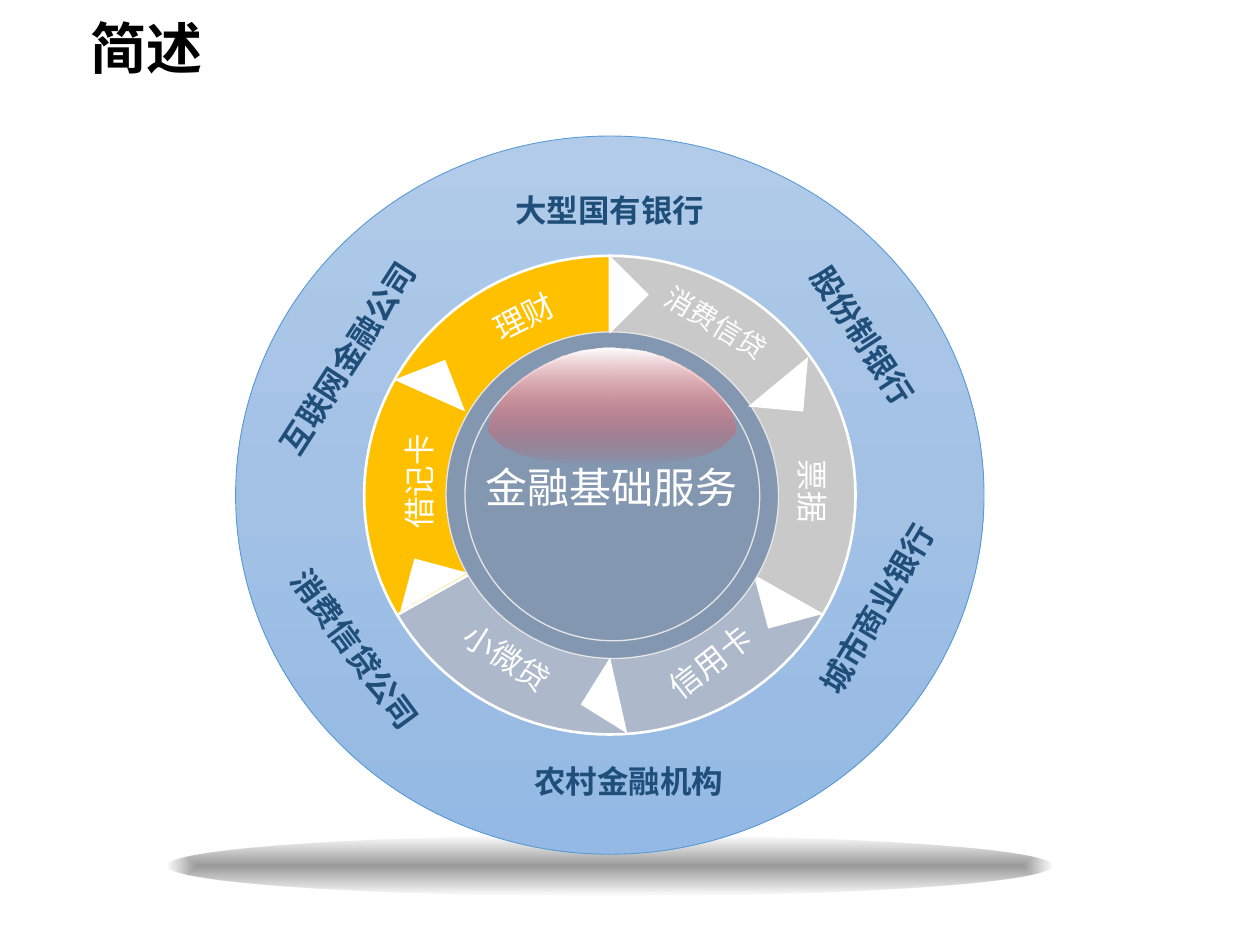
from math import cos, radians, sin

from lxml import etree
from pptx import Presentation
from pptx import util as u
from pptx.dml.color import RGBColor
from pptx.enum import shapes, text
from pptx.oxml import ns

WIDE, TALL = u.Inches(10), u.Inches(7.5)
COL, ROW = WIDE / 100, TALL / 75
WHITE = RGBColor(0xFF, 0xFF, 0xFF)
BLACK = RGBColor(0x00, 0x00, 0x00)
RED = RGBColor(0xFF, 0x00, 0x00)
NAVY = RGBColor(0x1F, 0x4E, 0x79)
SLATE = RGBColor(0x84, 0x97, 0xB0)
MIST = RGBColor(0xAD, 0xB9, 0xCA)
SILVER = RGBColor(0xC9, 0xC9, 0xC9)
GOLD = RGBColor(0xFF, 0xC0, 0x00)
PALE = RGBColor(0xE7, 0xE6, 0xE6)
EDGE = RGBColor(0x5B, 0x9B, 0xD5)
SKY = [RGBColor(0xB1, 0xCB, 0xE9), RGBColor(0xA3, 0xC1, 0xE5), RGBColor(0x93, 0xB9, 0xE4)]
NOTO, LATIN = "Noto Sans CJK SC", "Calibri"

TIPS = [(-13.95, 7.7, 105), (14.1, 7.9, 345), (0, -15.9, 225),
        (0.7, 15.9, 31.9), (-14.3, -7.9, 158.7), (13.35, -9, 275.1)]
GOODS = [("理财", -6.85, -14.2, 333.3, 18), ("票据", 16.15, -0.3, 90, 18),
         ("消费信贷", 8.35, -13.55, 31, 16), ("借记卡", -15.15, -1.1, 270, 18),
         ("小微贷", -8.15, 12.9, 32.5, 18), ("信用卡", 7.95, 13.2, 322, 18)]
BANKS = [("大型国有银行", 0, -22.6, 0, 18.6), ("股份制银行", 20.1, -12.7, 56.8, 18.6),
         ("城市商业银行", 21.2, 9, 300.9, 18.6), ("农村金融机构", 1.5, 22.7, 0, 18.6),
         ("互联网金融公司", -20.8, -10.9, 302.8, 20.8), ("消费信贷公司", -20.2, 12.2, 53.6, 18.6)]
GLOSS = [(0, -11.7), (1.4, -11.6), (2.7, -11.4), (4, -11), (5.1, -10.5), (6.2, -9.9),
         (7.2, -9.2), (8.1, -8.4), (8.8, -7.5), (9.5, -6.5), (9.8, -5.5), (9.8, -5),
         (9.4, -4.5), (8.6, -3.8), (7.3, -3.2), (5.6, -2.8), (3.5, -2.5), (2, -2.4)]


def area(hub, x, y, w, h):
    left, top = hub[0] + x - w / 2, hub[1] + y - h / 2
    return [u.Emu(round(n)) for n in (left * COL, top * ROW, w * COL, h * ROW)]


def paint(shape, fill=None, line=None, size=0.75):
    shape.shadow.inherit = False
    if fill is not None:
        shape.fill.solid()
        shape.fill.fore_color.rgb = fill
    if line is None:
        shape.line.fill.background()
    else:
        shape.line.color.rgb = line
        shape.line.width = u.Pt(size)


def blend(shape, stops, round_off=False):
    shape.fill.gradient()
    grad = shape.fill._xPr.find(ns.qn("a:gradFill"))
    for node in list(grad):
        grad.remove(node)
    row = etree.SubElement(grad, ns.qn("a:gsLst"))
    for pos, color, alpha in stops:
        stop = etree.SubElement(row, ns.qn("a:gs"), pos=str(pos * 1000))
        tint = etree.SubElement(stop, ns.qn("a:srgbClr"), val=str(color))
        if alpha < 100:
            etree.SubElement(tint, ns.qn("a:alpha"), val=str(alpha * 1000))
    if round_off:
        way = etree.SubElement(grad, ns.qn("a:path"), {"path": "shape"})
        etree.SubElement(way, ns.qn("a:fillToRect"), l="50000", t="50000", r="50000", b="50000")
    else:
        etree.SubElement(grad, ns.qn("a:lin"), ang="5400000", scaled="0")


def preset(slide, kind, spot, turn=0):
    shape = slide.shapes.add_shape(kind, *spot)
    shape.rotation = turn
    return shape


def outline(slide, hub, dots):
    pts = [(round((hub[0] + x) * COL), round((hub[1] + y) * ROW)) for x, y in dots]
    pen = slide.shapes.build_freeform(*pts[0], scale=1)
    pen.add_line_segments(pts[1:], close=True)
    return pen.convert_to_shape()


def label(slide, spot, words, size, color, face=NOTO, bold=False, turn=0,
          align=text.PP_ALIGN.CENTER):
    box = slide.shapes.add_textbox(*spot)
    box.rotation = turn
    frame = box.text_frame
    frame.word_wrap = True
    frame.auto_size = text.MSO_AUTO_SIZE.SHAPE_TO_FIT_TEXT
    para = frame.paragraphs[0]
    para.alignment = align
    run = para.add_run()
    run.text = words
    run.font.size = u.Pt(size)
    run.font.bold = bold
    run.font.color.rgb = color
    run.font.name = face
    etree.SubElement(run.font._element, ns.qn("a:ea"), typeface=NOTO)
    return frame


def title(slide, box):
    label(slide, area((0, 0), *box), "简述", 32, BLACK, bold=True, align=text.PP_ALIGN.LEFT)


def base(slide, hub):
    shade = preset(slide, shapes.MSO_SHAPE.OVAL, area(hub, 0, 29.4, 70.3, 4.8))
    paint(shade)
    blend(shade, [(0, BLACK, 40), (100, BLACK, 0)], True)
    ring = preset(slide, shapes.MSO_SHAPE.DONUT, area(hub, 0, 0, 59.4, 57))
    ring.adjustments[0] = 0.204
    paint(ring, line=EDGE, size=0.5)
    blend(ring, [(50 * i, color, 100) for i, color in enumerate(SKY)])


def sectors(slide, hub):
    for start, color in ((30, MIST), (270, SILVER), (150, GOLD)):
        arc = [radians(start + step) for step in range(0, 121, 3)]
        dots = [(0, 0)] + [(19.5 * cos(a), 19 * sin(a)) for a in arc]
        paint(outline(slide, hub, dots), color, WHITE, 1.5)


def tips(slide, hub, items):
    for x, y, turn in items:
        spot = area(hub, x, y, 4.35, 4.4)
        paint(preset(slide, shapes.MSO_SHAPE.RIGHT_TRIANGLE, spot, turn), WHITE)


def core(slide, hub):
    for w, h in ((26.4, 25.9), (23.4, 23.1)):
        disc = preset(slide, shapes.MSO_SHAPE.OVAL, area(hub, 0.2, 0, w, h), 10.8)
        paint(disc, SLATE, PALE)
    frame = label(slide, area(hub, 0.1, -0.75, 18.8, 3.9), "金融基础服务", 24, WHITE)
    frame.word_wrap = False
    frame.auto_size = text.MSO_AUTO_SIZE.NONE
    frame.margin_left = frame.margin_right = frame.margin_top = frame.margin_bottom = 0
    dots = GLOSS + [(-x, y) for x, y in GLOSS[:0:-1]]
    gloss = outline(slide, (hub[0] + 0.15, hub[1]), dots)
    paint(gloss)
    blend(gloss, [(0, WHITE, 100), (100, RED, 0)])


def names(slide, hub):
    for words, x, y, turn, size in GOODS:
        label(slide, area(hub, x, y, 11.1, 4), words, size, WHITE, turn=turn)
    for words, x, y, turn, w in BANKS:
        label(slide, area(hub, x, y, w, 4), words, 18, NAVY, LATIN, True, turn)


def wheel(slide, hub):
    base(slide, hub)
    sectors(slide, hub)
    tips(slide, hub, TIPS[:2])
    core(slide, hub)
    tips(slide, hub, TIPS[2:])
    names(slide, hub)


def main():
    deck = Presentation()
    deck.slide_width, deck.slide_height = WIDE, TALL
    slide = deck.slides.add_slide(deck.slide_layouts[6])
    wheel(slide, (48.4, 39.3))
    title(slide, (51.2, 6.5, 90, 11.8))
    deck.save("out.pptx")


if __name__ == "__main__":
    main()
